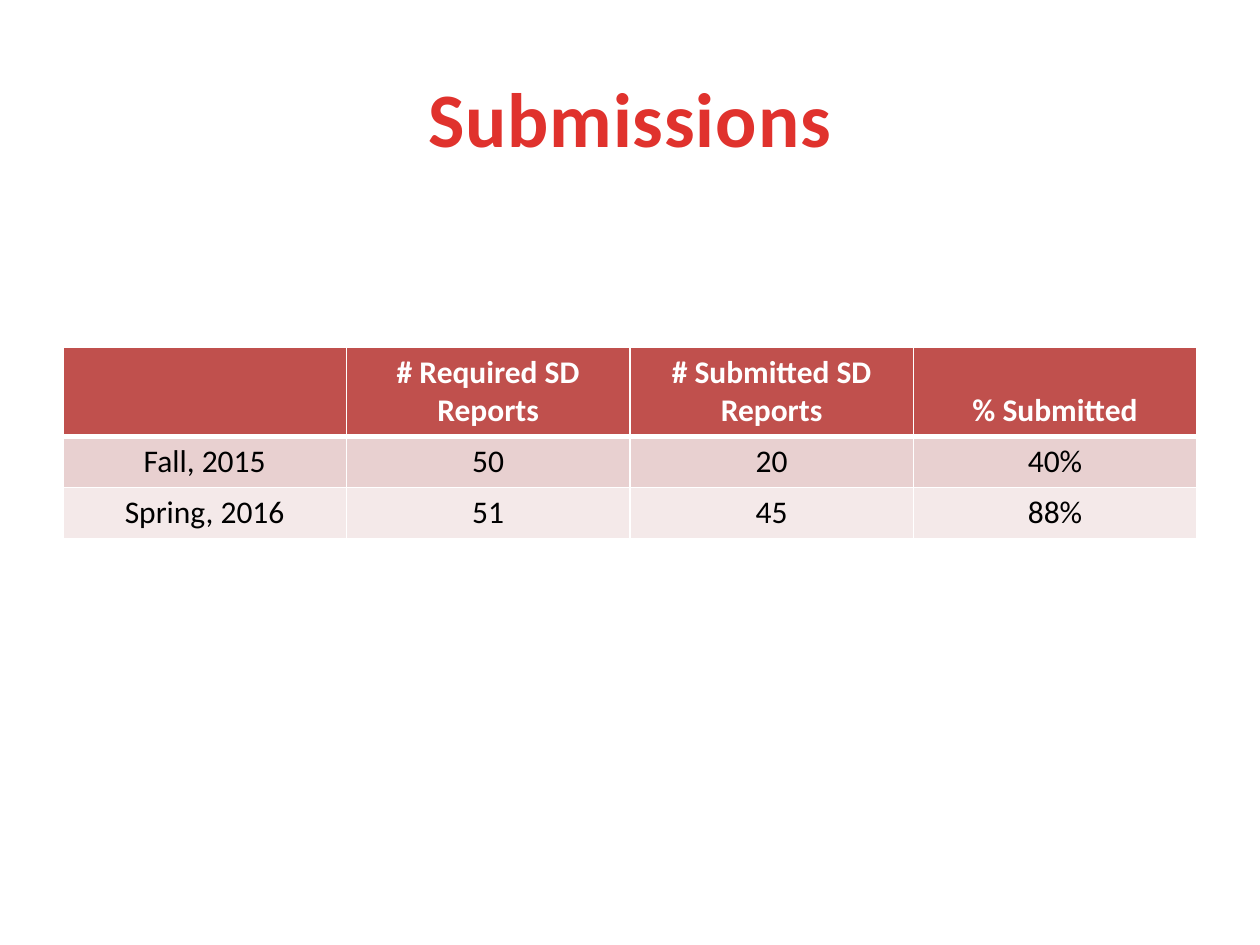
from lxml.etree import SubElement
from pptx import Presentation
from pptx.dml.color import RGBColor
from pptx.enum.text import MSO_ANCHOR, PP_ALIGN
from pptx.oxml.ns import qn
from pptx.util import Pt

PX = 914400 // 126
COLORS = {
    "title": "E0322D",
    "header": "C0504D",
    "band_dark": "E8D0D0",
    "band_light": "F4E9E9",
    "white": "FFFFFF",
    "black": "000000",
}
ROWS = [
    ["", "# Required SD Reports", "# Submitted SD Reports", "% Submitted"],
    ["Fall, 2015", "50", "20", "40%"],
    ["Spring, 2016", "51", "45", "88%"],
]
ROW_HEIGHTS = [89, 51, 51]
ROW_FILLS = ["header", "band_dark", "band_light"]


def rgb(name):
    return RGBColor.from_string(COLORS[name])


def write(tf, text, size=18, color="black", bold=False, spacing=0):
    p = tf.paragraphs[0]
    p.alignment = PP_ALIGN.CENTER
    p.font.size = Pt(size)
    if not text:
        return
    r = p.add_run()
    r.text = text
    r.font.name = "Calibri"
    r.font.size = Pt(size)
    r.font.bold = bold
    r.font.color.rgb = rgb(color)
    if spacing:
        r.font._element.set("spc", str(int(spacing * 100)))


def set_borders(cell, top=1, bottom=1):
    tcPr = cell._tc.get_or_add_tcPr()
    widths = {"lnL": 1, "lnR": 1, "lnT": top, "lnB": bottom}
    for side, width in widths.items():
        ln = SubElement(tcPr, qn(f"a:{side}"), w=str(Pt(width)))
        fill = SubElement(ln, qn("a:solidFill"))
        SubElement(fill, qn("a:srgbClr"), val=COLORS["white"])


def place_title(s, x, y, w, h):
    sp = s.shapes.title
    sp.left, sp.top, sp.width, sp.height = (v * PX for v in (x, y, w, h))
    tf = sp.text_frame
    tf.vertical_anchor = MSO_ANCHOR.MIDDLE
    write(tf, "Submissions", size=44, color="title", bold=True, spacing=0.5)


def place_table(s, x, y, w):
    box = (v * PX for v in (x, y, w, sum(ROW_HEIGHTS)))
    table = s.shapes.add_table(len(ROWS), len(ROWS[0]), *box).table
    for col in table.columns:
        col.width = w * PX // len(ROWS[0])
    for i, texts in enumerate(ROWS):
        header = i == 0
        table.rows[i].height = ROW_HEIGHTS[i] * PX
        for j, text in enumerate(texts):
            cell = table.cell(i, j)
            set_borders(cell, top=3 if i == 1 else 1, bottom=3 if header else 1)
            cell.fill.solid()
            cell.fill.fore_color.rgb = rgb(ROW_FILLS[i])
            cell.vertical_anchor = MSO_ANCHOR.BOTTOM if header else MSO_ANCHOR.TOP
            write(cell.text_frame, text, color="white" if header else "black", bold=header)


def main():
    prs = Presentation()
    prs.slide_width, prs.slide_height = 1260 * PX, 945 * PX
    s = prs.slides.add_slide(prs.slide_layouts[5])
    place_title(s, 63, 38, 1134, 158)
    place_table(s, 63, 347, 1134)
    prs.save("out.pptx")


if __name__ == "__main__":
    main()
